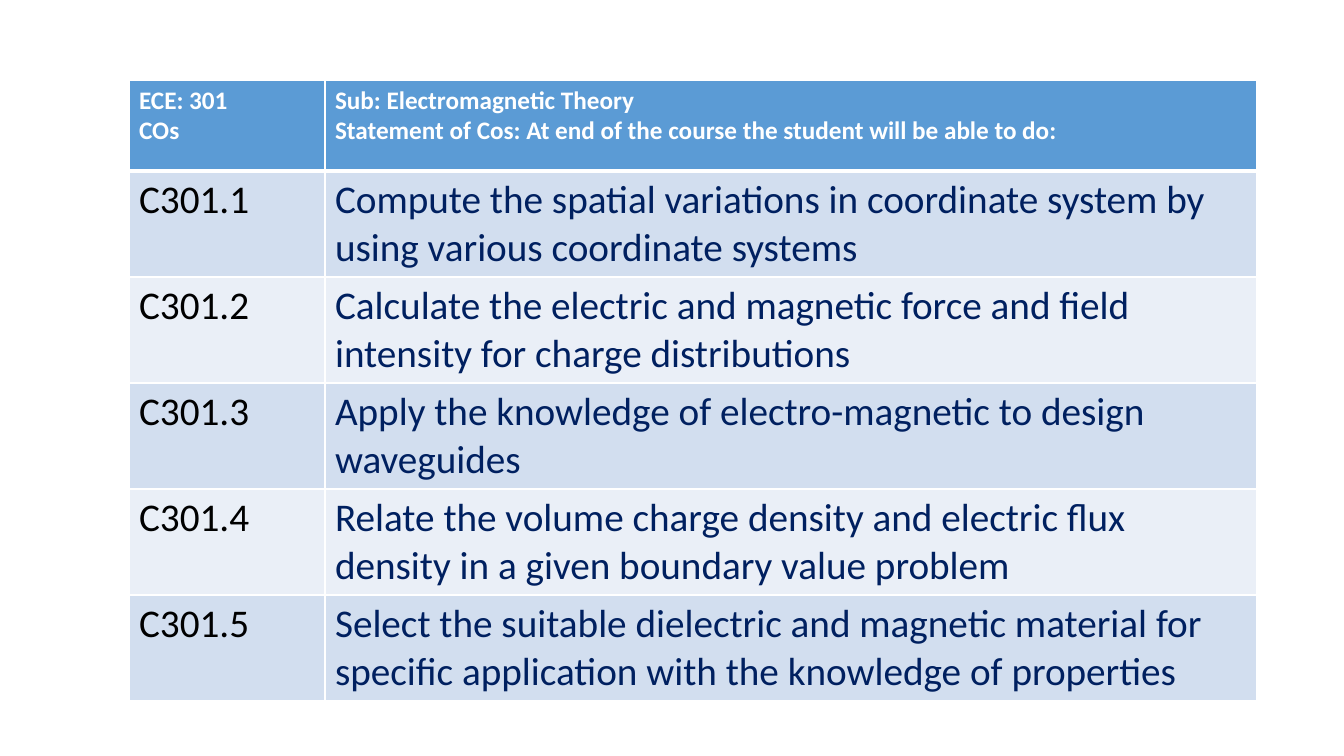
from pptx import Presentation
from pptx.dml.color import RGBColor
from pptx.oxml import parse_xml
from pptx.oxml.ns import nsdecls
from pptx.util import Emu, Pt

PX = 914400 / 100.8
HEADER = [
    ["ECE: 301", "COs"],
    ["Sub: Electromagnetic Theory",
     "Statement of Cos: At end of the course the student will be able to do:"],
]
OUTCOMES = [
    "Compute the spatial variations in coordinate system by using various coordinate systems",
    "Calculate the electric and magnetic force and field intensity for charge distributions",
    "Apply the knowledge of electro-magnetic to design waveguides",
    "Relate the volume charge density and electric flux density in a given boundary value problem",
    "Select the suitable dielectric and magnetic material for specific application "
    "with the knowledge of properties",
]


def px(n):
    return Emu(round(n * PX))


def rgb(color):
    return RGBColor.from_string(color)


class SlideBuilder:
    """Holds the table style and the current slide."""

    header = {"name": "Calibri", "size": Pt(18), "bold": True}
    body = {"name": "Calibri", "size": Pt(28), "bold": False}
    header_fill = "5B9BD5"
    bands = ["D2DEEF", "EAEFF7"]
    white = "FFFFFF"
    body_colors = ["000000", "002060"]

    def __init__(self, prs):
        self.s = prs.slides.add_slide(prs.slide_layouts[6])

    def border(self, cell, side, width):
        tcPr = cell._tc.get_or_add_tcPr()
        tcPr.append(parse_xml(
            f'<a:ln{side} {nsdecls("a")} w="{Pt(width)}"><a:solidFill>'
            f'<a:srgbClr val="{self.white}"/></a:solidFill></a:ln{side}>'))

    def cell(self, cell, lines, fmt, color, fill, top, bottom):
        for side, width in {"L": 1, "R": 1, "T": top, "B": bottom}.items():
            self.border(cell, side, width)
        cell.fill.solid()
        cell.fill.fore_color.rgb = rgb(fill)
        tf = cell.text_frame
        for i, line in enumerate(lines):
            p = tf.add_paragraph() if i else tf.paragraphs[0]
            r = p.add_run()
            r.text = line
            for key, value in fmt.items():
                setattr(r.font, key, value)
            r.font.color.rgb = rgb(color)

    def table(self, left, top, widths, heights, header, rows):
        frame = self.s.shapes.add_table(
            len(heights), len(widths), px(left), px(top), px(sum(widths)), px(sum(heights)))
        table = frame.table
        for col, width in zip(table.columns, widths):
            col.width = px(width)
        for row, height in zip(table.rows, heights):
            row.height = px(height)
        for j, lines in enumerate(header):
            self.cell(table.cell(0, j), lines, self.header, self.white, self.header_fill, 1, 3)
        for i, row in enumerate(rows, 1):
            fill = self.bands[(i - 1) % 2]
            for j, text in enumerate(row):
                self.cell(table.cell(i, j), [text], self.body, self.body_colors[j], fill,
                          3 if i == 1 else 1, 1)


def main():
    prs = Presentation()
    prs.slide_width, prs.slide_height = px(1344), px(756)
    rows = [(f"C301.{n}", text) for n, text in enumerate(OUTCOMES, 1)]
    SlideBuilder(prs).table(129, 80, [196, 932], [91] + [106] * len(rows), HEADER, rows)
    prs.save("out.pptx")


if __name__ == "__main__":
    main()
